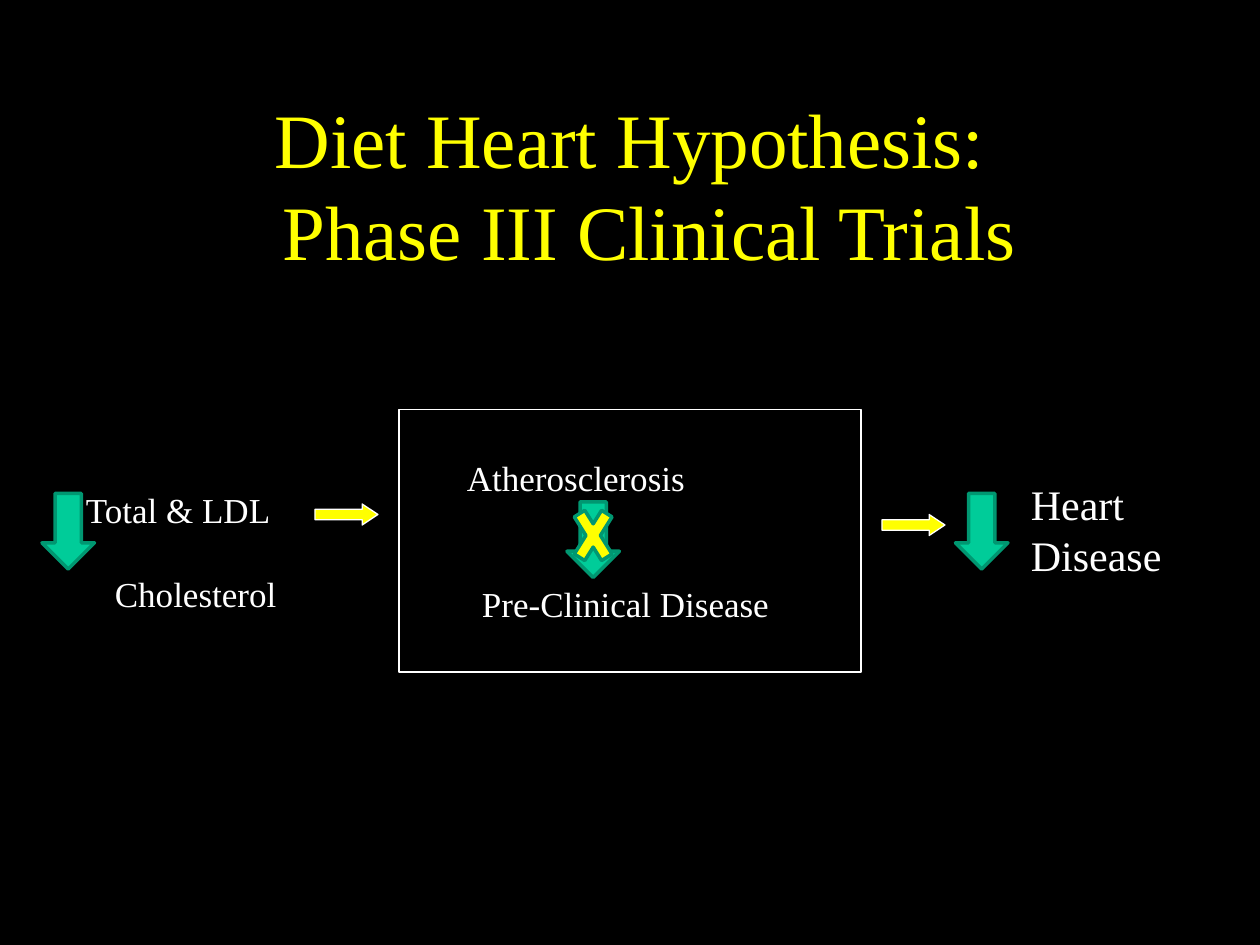
"""Build the Diet Heart Hypothesis slide on a grid of 120 columns by 90 rows."""
from typing import NamedTuple

from pptx import Presentation
from pptx.dml.color import RGBColor as Rgb
from pptx.enum.shapes import MSO_SHAPE as Kind
from pptx.enum.text import MSO_ANCHOR as Anchor, PP_ALIGN as Align
from pptx.util import Inches, Pt

COLS, ROWS = 120, 90
WIDE, HIGH = Inches(10), Inches(7.5)
FONT = "Times New Roman"
LEAD = 1.2
HUES = {
    "black": "000000",
    "white": "FFFFFF",
    "yellow": "FFFF00",
    "green": "00CC99",
    "edge": "009771",
}


class Cell(NamedTuple):
    col: float
    row: float
    cols: float
    rows: float

    def box(self) -> tuple[int, int, int, int]:
        return (
            int(WIDE * self.col / COLS),
            int(HIGH * self.row / ROWS),
            int(WIDE * self.cols / COLS),
            int(HIGH * self.rows / ROWS),
        )


class Line(NamedTuple):
    words: str
    indent: float = 0
    gap: float = 0


class Mark(NamedTuple):
    kind: Kind
    cell: Cell
    fill: str
    edge: str
    width: float


def hue(name: str) -> Rgb:
    return Rgb.from_string(HUES[name])


def draw(slide, mark: Mark):
    shape = slide.shapes.add_shape(mark.kind, *mark.cell.box())
    shape.shadow.inherit = False
    shape.fill.solid()
    shape.fill.fore_color.rgb = hue(mark.fill)
    shape.line.color.rgb = hue(mark.edge)
    shape.line.width = Pt(mark.width)
    if mark.kind == Kind.RIGHT_ARROW:
        shape.adjustments[1] = 0.75
    return shape


def write(shape, lines: list[Line], *, size: float = 20, color: str = "white",
          align: Align = Align.LEFT, anchor: Anchor = Anchor.TOP,
          top: float = 0.05) -> None:
    frame = shape.text_frame
    frame.word_wrap = True
    frame.vertical_anchor = anchor
    frame.margin_top = Inches(top)
    for i, line in enumerate(lines):
        para = frame.add_paragraph() if i else frame.paragraphs[0]
        para.alignment = align
        para.line_spacing = Pt(size * LEAD)
        para.space_before = Pt(line.gap)
        if line.indent:
            props = para._p.get_or_add_pPr()
            props.set("marL", str(Inches(line.indent)))
            props.set("indent", "0")
        run = para.add_run()
        run.text = line.words
        run.font.name = FONT
        run.font.size = Pt(size)
        run.font.color.rgb = hue(color)


def label(slide, cell: Cell, lines: list[Line], **style) -> None:
    write(slide.shapes.add_textbox(*cell.box()), lines, **style)


def main() -> None:
    deck = Presentation()
    deck.slide_width, deck.slide_height = WIDE, HIGH
    slide = deck.slides.add_slide(deck.slide_layouts[6])
    slide.background.fill.solid()
    slide.background.fill.fore_color.rgb = hue("black")

    label(slide, Cell(9, 10, 102, 15),
          [Line("Diet Heart Hypothesis:"),
           Line("Phase III Clinical Trials", indent=0.31)],
          size=44, color="yellow", align=Align.CENTER, anchor=Anchor.MIDDLE)

    stage = draw(slide, Mark(Kind.RECTANGLE, Cell(38, 39, 44, 25),
                             "black", "white", 0.75))
    write(stage, [Line("Atherosclerosis", indent=0.44),
                  Line("Pre-Clinical Disease", indent=0.56, gap=48)],
          anchor=Anchor.MIDDLE)

    label(slide, Cell(7, 42, 25, 13.2),
          [Line("Total & LDL"), Line("Cholesterol", indent=0.23, gap=24)],
          top=0.38)

    for col, row in ((30, 48), (84, 49)):
        draw(slide, Mark(Kind.RIGHT_ARROW, Cell(col, row, 6, 2),
                         "yellow", "white", 0.75))

    label(slide, Cell(97, 45, 17, 10.8), [Line("Heart Disease")], size=24)

    for col, row in ((4, 47), (91, 47), (54, 47.8)):
        draw(slide, Mark(Kind.DOWN_ARROW, Cell(col, row, 5, 7.2),
                         "green", "edge", 2))
    draw(slide, Mark(Kind.MATH_MULTIPLY, Cell(54, 47, 5, 8),
                     "yellow", "edge", 2))

    deck.save("out.pptx")


if __name__ == "__main__":
    main()
